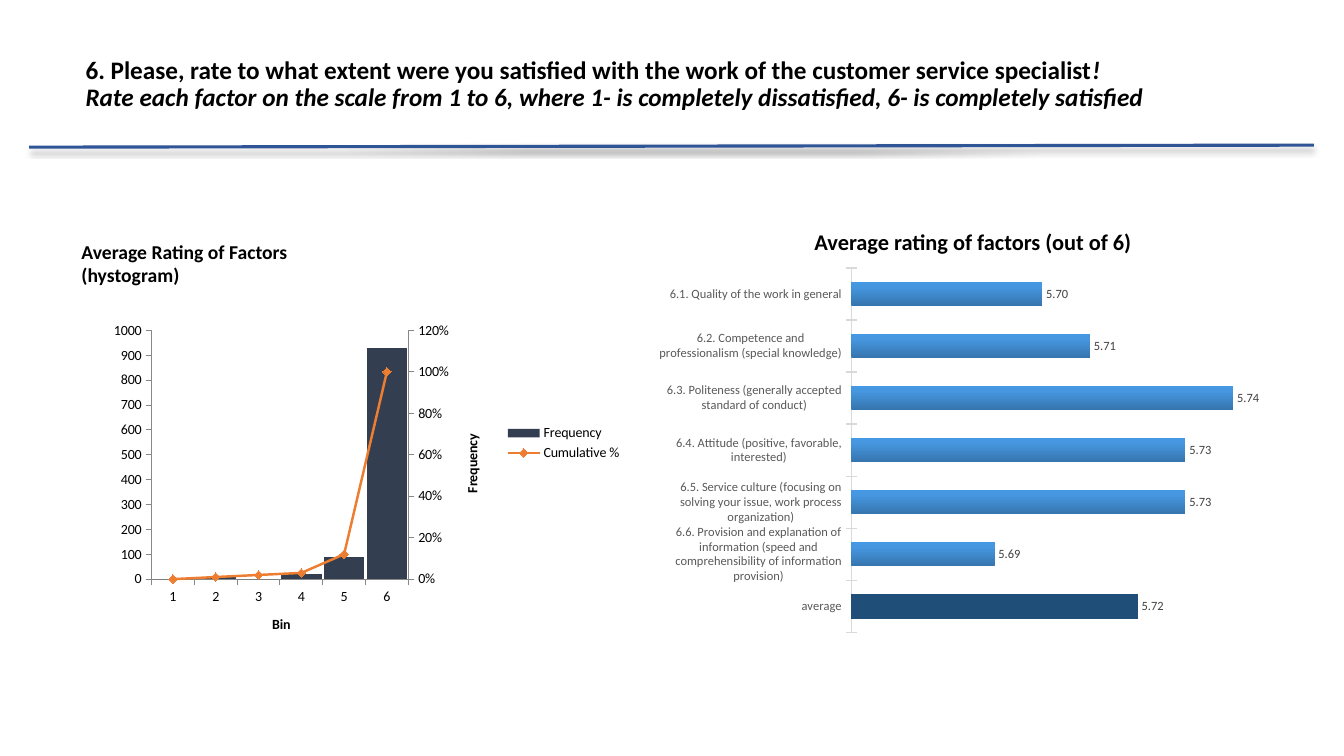
from copy import deepcopy

from pptx import Presentation
from pptx.chart.axis import ValueAxis
from pptx.chart.data import CategoryChartData
from pptx.dml.color import RGBColor
from pptx.enum.chart import (XL_CHART_TYPE, XL_LABEL_POSITION, XL_LEGEND_POSITION,
                             XL_MARKER_STYLE, XL_TICK_MARK)
from pptx.enum.shapes import MSO_CONNECTOR
from pptx.enum.text import MSO_ANCHOR
from pptx.oxml import parse_xml
from pptx.oxml.ns import nsdecls, qn
from pptx.util import Inches, Pt

FONT = "Calibri"
COLORS = {
    "text": "000000", "label": "404040", "category": "595959",
    "rule": "2F5597", "axis": "888888", "pale_axis": "D9D9D9",
    "frequency": "333F50", "cumulative": "ED7D31", "average": "1F4E79",
}
BAR_GRADIENT = [(0, "3674AD"), (0.8, "4697E0"), (1, "4498E4")]
FACTOR_RATINGS = {
    "6.1. Quality of the work in general": 5.70,
    "6.2. Competence and professionalism (special knowledge)": 5.71,
    "6.3. Politeness (generally accepted standard of conduct)": 5.74,
    "6.4. Attitude (positive, favorable, interested)": 5.73,
    "6.5. Service culture (focusing on solving your issue, work process organization)": 5.73,
    "6.6. Provision and explanation of information (speed and comprehensibility of "
    "information provision)": 5.69,
    "average": 5.72,
}
FREQUENCIES = [0, 10, 0, 20, 90, 930]
CUMULATIVE = [0, 0.01, 0.02, 0.03, 0.12, 1]


def rgb(name):
    return RGBColor.from_string(COLORS[name])


def style_font(font, size, color="text", bold=False, italic=False):
    font.name, font.size, font.bold, font.italic = FONT, Pt(size), bold, italic
    font.color.rgb = rgb(color)


def add_text(slide, box, size, lines, wrap=True, anchor=MSO_ANCHOR.TOP, spacing=1.0):
    """Each line is a list of (text, italic) runs; lines are split by line breaks."""
    frame = slide.shapes.add_textbox(*map(Inches, box)).text_frame
    frame.word_wrap = wrap
    frame.vertical_anchor = anchor
    paragraph = frame.paragraphs[0]
    paragraph.line_spacing = spacing
    for number, line in enumerate(lines):
        if number:
            paragraph.add_line_break()
        for text, italic in line:
            run = paragraph.add_run()
            run.text = text
            style_font(run.font, size, bold=True, italic=italic)


def add_chart(slide, box, chart_type, categories, series, plot_box):
    data = CategoryChartData()
    data.categories = categories
    for name, values in series:
        data.add_series(name, values)
    chart = slide.shapes.add_chart(chart_type, *map(Inches, box), data).chart
    style_font(chart.font, 10)
    chart.has_title = False
    chart.has_legend = False
    chart.plots[0].vary_by_categories = False
    chart.value_axis.has_major_gridlines = False

    # Fixed inner plot area, in fractions of the chart
    plot_area = chart._chartSpace.chart.plotArea
    for layout in plot_area.findall(qn("c:layout")):
        plot_area.remove(layout)
    places = "".join(f'<c:{tag} val="{value}"/>' for tag, value in zip("xywh", plot_box))
    plot_area.insert(0, parse_xml(
        f'<c:layout {nsdecls("c")}><c:manualLayout><c:layoutTarget val="inner"/>'
        f'<c:xMode val="edge"/><c:yMode val="edge"/>{places}</c:manualLayout></c:layout>'))
    return chart


def style_axis(axis, tick, color, width):
    axis.major_tick_mark = tick
    axis.minor_tick_mark = XL_TICK_MARK.NONE
    axis.format.line.color.rgb = rgb(color)
    axis.format.line.width = Pt(width)


def set_scale(axis, low, high, step):
    axis.minimum_scale, axis.maximum_scale, axis.major_unit = low, high, step


def set_axis_title(axis, text):
    frame = axis.axis_title.text_frame
    run = frame.paragraphs[0].add_run()
    run.text = text
    style_font(run.font, 10, bold=True)
    return frame


def add_header(slide, box):
    left, top, width, height = box
    question = ("6. Please, rate to what extent were you satisfied with the work of the "
                "customer service specialist")
    scale = ("Rate each factor on the scale from 1 to 6, where 1- is completely "
             "dissatisfied, 6- is completely satisfied")
    add_text(slide, box, 18, [[(question, False), ("!", True)], [(scale, True)]],
             anchor=MSO_ANCHOR.MIDDLE, spacing=0.9)

    # Rule with a soft shadow below the heading
    rule_top = top + height + 0.1
    rule = slide.shapes.add_connector(
        MSO_CONNECTOR.STRAIGHT, Inches(left - 0.46), Inches(rule_top + 0.02),
        Inches(left + width + 0.61), Inches(rule_top))
    rule.line.color.rgb = rgb("rule")
    rule.line.width = Pt(2.25)
    rule._element.spPr.append(parse_xml(
        f'<a:effectLst {nsdecls("a")}><a:outerShdw blurRad="{Pt(4)}" dist="{Pt(3)}" '
        'dir="5400000" algn="t" rotWithShape="0"><a:srgbClr val="000000">'
        '<a:alpha val="40000"/></a:srgbClr></a:outerShdw></a:effectLst>'))


def move_last_series_to_line(chart):
    """Put the last column series on a line with its own right axis; return that axis."""
    columns = chart._chartSpace.chart.plotArea.find(qn("c:barChart"))
    series = columns.findall(qn("c:ser"))[-1]
    for flag in series.findall(qn("c:invertIfNegative")):
        series.remove(flag)
    line_chart = parse_xml(
        f'<c:lineChart {nsdecls("c")}><c:grouping val="standard"/><c:varyColors val="0"/>'
        '<c:marker val="1"/><c:axId val="50010"/><c:axId val="50020"/></c:lineChart>')
    line_chart.insert(2, series)
    columns.addnext(line_chart)

    category = deepcopy(chart.category_axis._element)
    right = deepcopy(chart.value_axis._element)
    for element, own, other in ((category, "50010", "50020"), (right, "50020", "50010")):
        element.find(qn("c:axId")).set("val", own)
        element.find(qn("c:crossAx")).set("val", other)
    category.find(qn("c:delete")).set("val", "1")
    right.find(qn("c:axPos")).set("val", "r")
    right.find(qn("c:crosses")).set("val", "max")
    chart.value_axis._element.addnext(right)
    right.addnext(category)
    return ValueAxis(right)


def add_histogram(slide, box):
    left, top, _, _ = box
    chart = add_chart(slide, box, XL_CHART_TYPE.COLUMN_CLUSTERED, list("123456"),
                      [("Frequency", FREQUENCIES), ("Cumulative %", CUMULATIVE)],
                      (0.171, 0.21, 0.443, 0.641))
    for axis in (chart.category_axis, chart.value_axis):
        style_axis(axis, XL_TICK_MARK.OUTSIDE, "axis", 0.75)
    right_axis = move_last_series_to_line(chart)
    set_scale(chart.value_axis, 0, 1000, 100)
    set_scale(right_axis, 0, 1.2, 0.2)
    right_axis.tick_labels.number_format = "0%"
    right_axis.tick_labels.number_format_is_linked = False
    set_axis_title(chart.category_axis, "Bin")
    frame = set_axis_title(chart.value_axis, "Frequency")
    frame._txBody.find(qn("a:bodyPr")).set("rot", "-5400000")

    # Columns and cumulative line
    columns, lines = chart.plots
    columns.gap_width = 5
    fill = columns.series[0].format.fill
    fill.solid()
    fill.fore_color.rgb = rgb("frequency")
    cumulative = lines.series[0]
    cumulative.smooth = False
    cumulative.format.line.color.rgb = rgb("cumulative")
    cumulative.format.line.width = Pt(1.75)
    cumulative.marker.style = XL_MARKER_STYLE.DIAMOND
    cumulative.marker.size = 6
    cumulative.marker.format.fill.solid()
    cumulative.marker.format.fill.fore_color.rgb = rgb("cumulative")
    cumulative.marker.format.line.color.rgb = rgb("cumulative")

    chart.has_legend = True
    chart.legend.position = XL_LEGEND_POSITION.RIGHT
    chart.legend.include_in_layout = False
    style_font(chart.legend.font, 10)
    add_text(slide, (left + 0.19, top - 0.14, 3, 0.34), 14,
             [[("Average Rating of Factors (hystogram)", False)]])


def add_factor_ratings(slide, box):
    left, top, _, _ = box
    chart = add_chart(slide, box, XL_CHART_TYPE.BAR_CLUSTERED, list(FACTOR_RATINGS),
                      [("Series 1", list(FACTOR_RATINGS.values()))],
                      (0.293, 0.135, 0.69, 0.802))
    style_axis(chart.category_axis, XL_TICK_MARK.CROSS, "pale_axis", 1)
    style_font(chart.category_axis.tick_labels.font, 9, "category")
    chart.category_axis.reverse_order = True
    set_scale(chart.value_axis, 5.66, 5.75, 0.01)
    chart.value_axis.visible = False

    # Gradient bars, with a solid one for the average
    plot = chart.plots[0]
    plot.gap_width, plot.overlap = 115, -20
    series = plot.series[0]
    fill = series.format.fill
    fill.gradient()
    fill.gradient_angle = 90
    stop_list = series._element.find(".//" + qn("a:gsLst"))
    stop_list.append(deepcopy(stop_list[-1]))
    for stop, (position, color) in zip(fill.gradient_stops, BAR_GRADIENT):
        stop.position = position
        stop.color.rgb = RGBColor.from_string(color)
    average_fill = series.points[len(FACTOR_RATINGS) - 1].format.fill
    average_fill.solid()
    average_fill.fore_color.rgb = rgb("average")

    labels = series.data_labels
    labels.show_value = True
    labels.position = XL_LABEL_POSITION.OUTSIDE_END
    labels.number_format, labels.number_format_is_linked = "0.00", False
    style_font(labels.font, 9, "label")
    add_text(slide, (left + 1.44, top + 0.16, 3.4, 0.37), 16,
             [[("Average rating of factors (out of 6)", False)]], wrap=False)


def main():
    presentation = Presentation()
    presentation.slide_width, presentation.slide_height = Inches(13.33), Inches(7.5)
    slide = presentation.slides.add_slide(presentation.slide_layouts[6])
    add_header(slide, (0.75, 0.35, 11.67, 0.99))
    add_factor_ratings(slide, (6.54, 2.05, 6.27, 4.51))
    add_histogram(slide, (0.52, 2.47, 5.75, 3.85))
    presentation.save("out.pptx")


if __name__ == "__main__":
    main()
